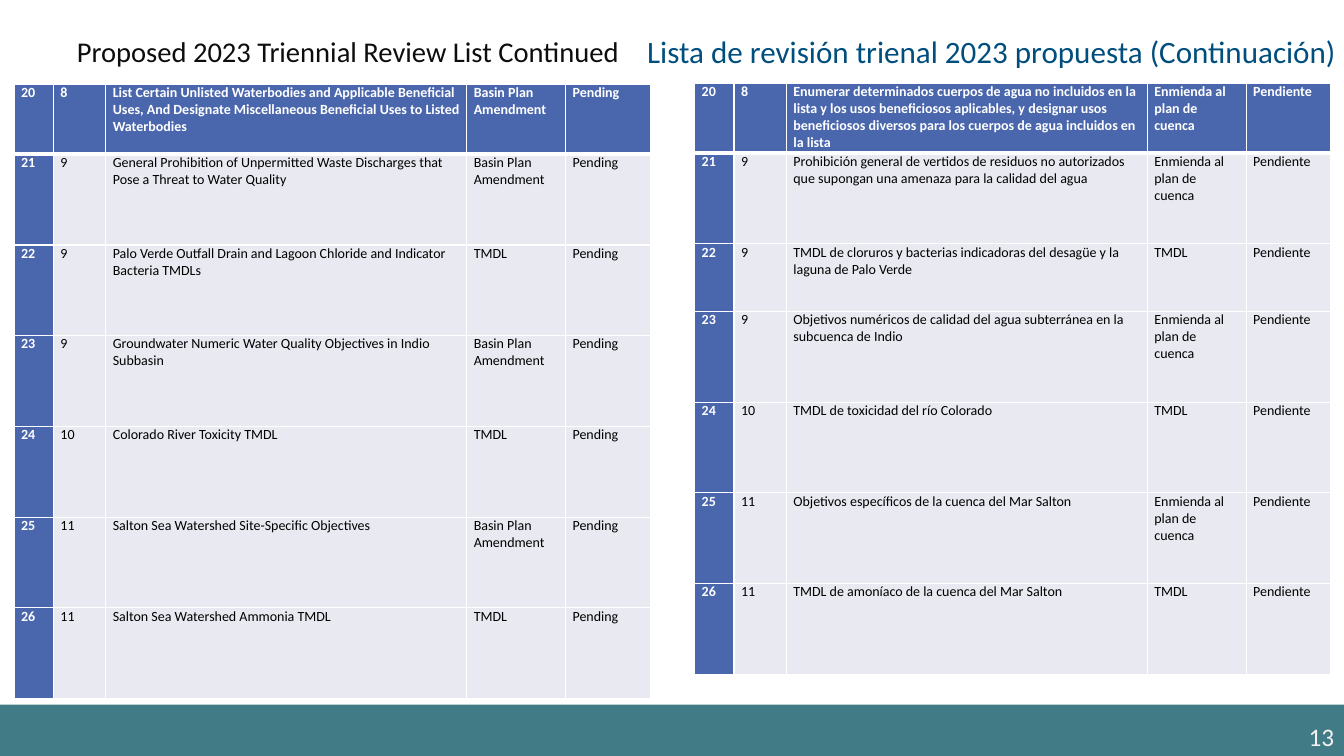
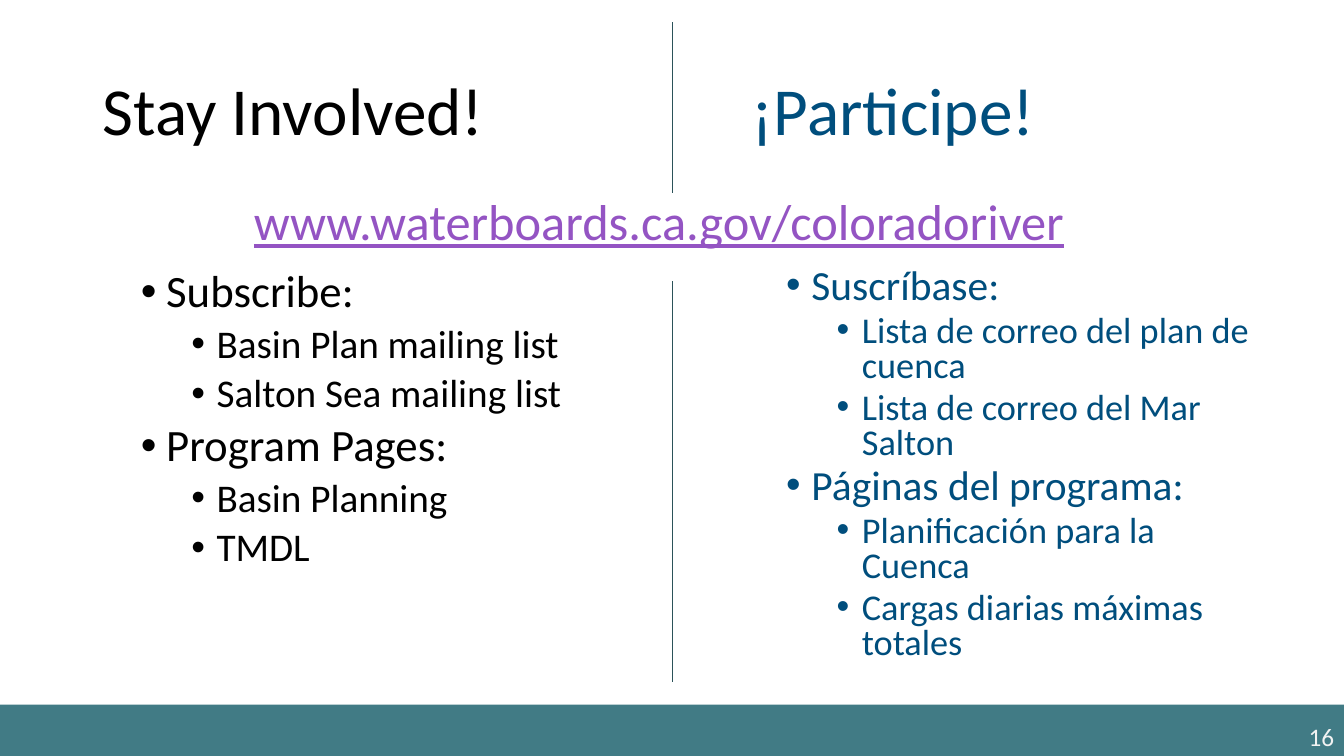
"""Build two bilingual slides about the triennial review."""

from dataclasses import dataclass
from typing import Any, NamedTuple

import pptx
import pptx.dml.color
import pptx.enum.shapes
import pptx.enum.text
import pptx.oxml
import pptx.oxml.ns
import pptx.util

Inches = pptx.util.Inches
Align = pptx.enum.text.PP_ALIGN
Anchor = pptx.enum.text.MSO_ANCHOR

FONT = "Calibri"
BLACK, NEAR_BLACK, WHITE = "000000", "0D0D0D", "FFFFFF"
SPANISH_BLUE, BAND_TEAL, LINE_TEAL = "004E7D", "417B85", "2B5259"
TABLE_BLUE, TABLE_PALE = "4A66AC", "E9EAF1"
LINK_PURPLE, NUMBER_GREY = "9454C3", "F2F2F2"
COLUMN_WIDTHS = (0.39, 0.52, 3.58, 0.98, 0.84)
TITLE_ONLY = 5


class Box(NamedTuple):
    """Left, top, width and height in inches."""

    left: float
    top: float
    width: float
    height: float

    def lengths(self) -> list[int]:
        """Return the four measures as lengths."""
        return [Inches(value) for value in self]


@dataclass(frozen=True)
class Heading:
    """A heading in one language."""

    text: str
    box: Box
    size: float
    color: str
    spacing: float = 0.9
    align: Any = Align.LEFT


@dataclass(frozen=True)
class ReviewTable:
    """A review list in one language, with its repeated wording."""

    left: float
    top: float
    row_heights: tuple[float, ...]
    topics: tuple[str, ...]
    amendment: str
    status: str


@dataclass(frozen=True)
class BulletList:
    """Groups of a lead line and its items."""

    box: Box
    color: str
    sizes: tuple[float, float]
    spacing: float
    groups: tuple[tuple[str, ...], ...]


REVIEW_NUMBERS = ("8", "9", "9", "9", "10", "11", "11")
TMDL_ROWS = (2, 4, 6)

REVIEW_HEADINGS = (
    Heading("Proposed 2023 Triennial Review List Continued",
            Box(0.61, 0.27, 5.68, 0.53), 20.4, NEAR_BLACK, 0.8, Align.CENTER),
    Heading("Lista de revisión trienal 2023 propuesta (Continuación)",
            Box(6.15, 0.27, 7.37, 0.53), 22.2, SPANISH_BLUE, 0.9, Align.CENTER),
)
REVIEW_TABLES = (
    ReviewTable(
        0.14, 0.84, (0.69,) + (0.9,) * 6,
        (
            "List Certain Unlisted Waterbodies and Applicable Beneficial Uses, And Designate "
            "Miscellaneous Beneficial Uses to Listed Waterbodies",
            "General Prohibition of Unpermitted Waste Discharges that Pose a Threat to Water Quality",
            "Palo Verde Outfall Drain and Lagoon Chloride and Indicator Bacteria TMDLs",
            "Groundwater Numeric Water Quality Objectives in Indio Subbasin",
            "Colorado River Toxicity TMDL",
            "Salton Sea Watershed Site-Specific Objectives",
            "Salton Sea Watershed Ammonia TMDL",
        ),
        "Basin Plan Amendment", "Pending",
    ),
    ReviewTable(
        6.89, 0.83, (0.69, 0.9, 0.67) + (0.9,) * 4,
        (
            "Enumerar determinados cuerpos de agua no incluidos en la lista y los usos beneficiosos "
            "aplicables, y designar usos beneficiosos diversos para los cuerpos de agua incluidos en la lista",
            "Prohibición general de vertidos de residuos no autorizados que supongan una amenaza "
            "para la calidad del agua",
            "TMDL de cloruros y bacterias indicadoras del desagüe y la laguna de Palo Verde",
            "Objetivos numéricos de calidad del agua subterránea en la subcuenca de Indio",
            "TMDL de toxicidad del río Colorado",
            "Objetivos específicos de la cuenca del Mar Salton",
            "TMDL de amoníaco de la cuenca del Mar Salton",
        ),
        "Enmienda al plan de cuenca", "Pendiente",
    ),
)
INVOLVED_HEADINGS = (
    Heading("Stay Involved!", Box(0.92, 0.4, 5.49, 1.45), 48, BLACK),
    Heading("¡Participe!", Box(7.36, 0.4, 5.49, 1.45), 48, SPANISH_BLUE),
)
INVOLVED_LISTS = (
    BulletList(
        Box(0.8, 2.62, 5.33, 4.14), BLACK, (32, 28), 0.9,
        (
            ("Subscribe:", "Basin Plan mailing list", "Salton Sea mailing list"),
            ("Program Pages:", "Basin Planning", "TMDL"),
        ),
    ),
    BulletList(
        Box(7.2, 2.62, 5.33, 4.14), SPANISH_BLUE, (29.6, 25.9), 0.8,
        (
            ("Suscríbase:", "Lista de correo del plan de cuenca", "Lista de correo del Mar Salton"),
            ("Páginas del programa:", "Planificación para la Cuenca", "Cargas diarias máximas totales"),
        ),
    ),
)
DIVIDERS = ((0.22, 1.91), (2.79, 6.77))


def rgb(color: str) -> Any:
    """Turn a hex string into a colour."""
    return pptx.dml.color.RGBColor.from_string(color)


def write_text(paragraph: Any, text: str, *, size: float, color: str, bold: bool = False,
               underline: bool = False, align: Any = Align.LEFT, spacing: float = 1.0,
               before: float = 0) -> None:
    """Write formatted text into a paragraph."""
    paragraph.alignment = align
    paragraph.line_spacing = spacing
    paragraph.space_before = pptx.util.Pt(before)
    run = paragraph.add_run()
    run.text = text
    run.font.name = FONT
    run.font.size = pptx.util.Pt(size)
    run.font.bold = bold
    run.font.underline = underline
    run.font.color.rgb = rgb(color)


def add_frame(slide: Any, box: Box) -> Any:
    """Add a wrapping text box and return its text frame."""
    frame = slide.shapes.add_textbox(*box.lengths()).text_frame
    frame.word_wrap = True
    return frame


def add_headings(slide: Any, headings: tuple[Heading, ...]) -> None:
    """Fill the title with the first heading and add the others beside it."""
    for index, heading in enumerate(headings):
        if index == 0:
            title = slide.shapes.title
            title.left, title.top, title.width, title.height = heading.box.lengths()
            frame = title.text_frame
            frame.word_wrap = True
        else:
            frame = add_frame(slide, heading.box)
        frame.auto_size = pptx.enum.text.MSO_AUTO_SIZE.NONE
        frame.vertical_anchor = Anchor.MIDDLE
        write_text(frame.paragraphs[0], heading.text, size=heading.size, color=heading.color,
                   align=heading.align, spacing=heading.spacing)


def add_slide(presentation: Any, number: int, headings: tuple[Heading, ...]) -> Any:
    """Add a slide with the shared band, page number and headings."""
    slide = presentation.slides.add_slide(presentation.slide_layouts[TITLE_ONLY])
    band = slide.shapes.add_shape(pptx.enum.shapes.MSO_SHAPE.RECTANGLE,
                                  *Box(0, 6.99, 13.33, 0.51).lengths())
    band.shadow.inherit = False
    band.fill.solid()
    band.fill.fore_color.rgb = rgb(BAND_TEAL)
    band.line.fill.background()
    frame = add_frame(slide, Box(10.33, 7.11, 3, 0.4))
    write_text(frame.paragraphs[0], str(number), size=18, color=NUMBER_GREY, align=Align.RIGHT)
    add_headings(slide, headings)
    return slide


def set_borders(cell: Any, top: float, bottom: float) -> None:
    """Give a cell white borders of the given point widths."""
    properties = cell._tc.get_or_add_tcPr()
    namespace = pptx.oxml.ns.nsdecls("a")
    for side, width in (("L", 1), ("R", 1), ("T", top), ("B", bottom)):
        properties.append(pptx.oxml.parse_xml(
            f'<a:ln{side} {namespace} w="{pptx.util.Pt(width)}"><a:solidFill>'
            f'<a:srgbClr val="{WHITE}"/></a:solidFill></a:ln{side}>'))


def add_review_table(slide: Any, review: ReviewTable) -> None:
    """Add a review list with a blue first row and first column."""
    box = Box(review.left, review.top, sum(COLUMN_WIDTHS), sum(review.row_heights))
    table = slide.shapes.add_table(len(review.topics), len(COLUMN_WIDTHS), *box.lengths()).table
    table.first_row = table.horz_banding = False
    for column, width in zip(table.columns, COLUMN_WIDTHS):
        column.width = Inches(width)
    for index, (topic, height) in enumerate(zip(review.topics, review.row_heights)):
        table.rows[index].height = Inches(height)
        kind = "TMDL" if index in TMDL_ROWS else review.amendment
        values = (str(20 + index), REVIEW_NUMBERS[index], topic, kind, review.status)
        for position, value in enumerate(values):
            strong = index == 0 or position == 0
            cell = table.cell(index, position)
            cell.margin_left = cell.margin_right = Inches(0.07)
            cell.margin_top = cell.margin_bottom = 0
            set_borders(cell, top=3 if index == 1 else 1, bottom=3 if index == 0 else 1)
            cell.fill.solid()
            cell.fill.fore_color.rgb = rgb(TABLE_BLUE if strong else TABLE_PALE)
            write_text(cell.text_frame.paragraphs[0], value, size=10,
                       color=WHITE if strong else BLACK, bold=strong)


def add_bullet(paragraph: Any, level: int) -> None:
    """Give a paragraph a hanging bullet at a level."""
    paragraph.level = level
    properties = paragraph._p.get_or_add_pPr()
    properties.set("marL", str(Inches(0.25 + 0.5 * level)))
    properties.set("indent", str(Inches(-0.25)))
    namespace = pptx.oxml.ns.nsdecls("a")
    properties.append(pptx.oxml.parse_xml(f'<a:buFont {namespace} typeface="Arial"/>'))
    properties.append(pptx.oxml.parse_xml(f'<a:buChar {namespace} char="•"/>'))


def add_bullet_list(slide: Any, bullets: BulletList) -> None:
    """Add a two-level bullet list."""
    frame = add_frame(slide, bullets.box)
    lines = [(text, min(position, 1)) for group in bullets.groups
             for position, text in enumerate(group)]
    for index, (text, depth) in enumerate(lines):
        paragraph = frame.add_paragraph() if index else frame.paragraphs[0]
        add_bullet(paragraph, depth + 1)
        write_text(paragraph, text, size=bullets.sizes[depth], color=bullets.color,
                   spacing=bullets.spacing, before=5 if index else 0)


def add_divider(slide: Any, top: float, bottom: float) -> None:
    """Add a vertical line between the two languages."""
    center = Inches(6.67)
    line = slide.shapes.add_connector(pptx.enum.shapes.MSO_CONNECTOR.STRAIGHT,
                                      center, Inches(top), center, Inches(bottom))
    line.line.color.rgb = rgb(LINE_TEAL)
    line.line.width = pptx.util.Pt(1)
    line._element.spPr.append(
        pptx.oxml.parse_xml(f'<a:effectLst {pptx.oxml.ns.nsdecls("a")}/>'))


def main() -> None:
    """Build and save the presentation."""
    presentation = pptx.Presentation()
    presentation.slide_width, presentation.slide_height = Inches(13.33), Inches(7.5)

    review_slide = add_slide(presentation, 13, REVIEW_HEADINGS)
    for review in REVIEW_TABLES:
        add_review_table(review_slide, review)

    involved_slide = add_slide(presentation, 16, INVOLVED_HEADINGS)
    address = add_frame(involved_slide, Box(2.42, 1.91, 8.49, 0.66))
    write_text(address.paragraphs[0], "www.waterboards.ca.gov/coloradoriver", size=36,
               color=LINK_PURPLE, underline=True, spacing=0.9)
    for bullets in INVOLVED_LISTS:
        add_bullet_list(involved_slide, bullets)
    for top, bottom in DIVIDERS:
        add_divider(involved_slide, top, bottom)

    presentation.save("out.pptx")


if __name__ == "__main__":
    main()
